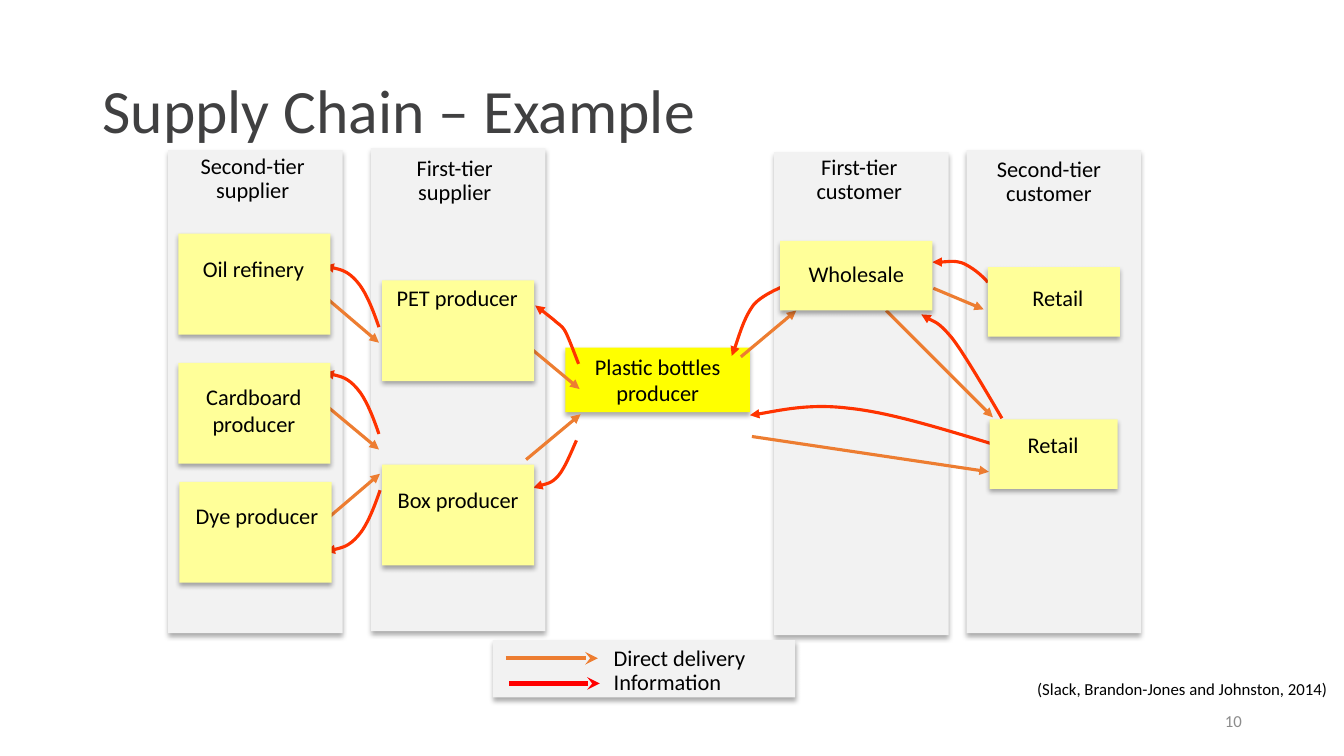
import pptx
import pptx.dml.color
import pptx.enum.shapes
import pptx.enum.text
import pptx.oxml
import pptx.oxml.ns
import pptx.util
from lxml import etree

# ---- Content (lengths in points) ----
TITLE = "Supply Chain – Example"
CITATION = "(Slack, Brandon-Jones and Johnston, 2014)"
PAGE_NUMBER = "10"

# text, left, top, text top inset, sideways text shift
PANELS = [
    ("Second-tier supplier", 120.2, 107.3, 3.6, -2),
    ("First-tier supplier", 265, 105.8, 6.5, -2.5),
    ("First-tier customer", 553, 108.7, 2.9, -1.5),
    ("Second-tier customer", 690.5, 107.3, 5.8, -3.5),
]
PANEL_SIZE = (124.6, 345)
PRODUCER = ("Plastic bottles producer", 403.9, 248.4, 131.8, 46.1, 3.6, 0)

# text, left, top, width, height, text top inset, sideways text shift
COMPANIES = [
    ("Oil refinery", 127.4, 167, 108.7, 72, 15.1, -0.7),
    ("Cardboard producer", 127.4, 259.2, 108.7, 72, 14.4, -0.4),
    ("Dye producer", 128.2, 344.2, 108.7, 72, 14.4, 1),
    ("PET producer", 272.9, 200.2, 108.7, 72, 2.9, -0.7),
    ("Box producer", 272.9, 331.9, 108.7, 72, 15.1, 0),
    ("Wholesale", 557.3, 172.1, 108.7, 49.7, 13.7, 0),
    ("Retail", 705.6, 190.8, 94.3, 49.7, 12.2, 2.9),
    ("Retail", 707, 299.5, 91.4, 49.7, 8.6, -0.4),
]

# Straight arrows, start to tip
DELIVERIES = [
    (231.8, 211.7, 270.7, 244.8), (231.8, 288.7, 270.7, 321.1),
    (232.6, 371.5, 271.4, 338.4), (375.1, 245.5, 414, 277.9),
    (375.8, 328.3, 414.7, 295.9), (529.2, 254.9, 568.8, 221.8),
    (537.1, 311.8, 706.3, 337), (632.9, 221.8, 709.2, 298.1),
    (666.7, 205.9, 702.7, 221),
]

# One curve shared by the second-tier suppliers: offsets from the tip
SUPPLIER_CURVE = [(38.9, 43.6), (34.6, 31), (29.5, 18), (23, 10.8),
                  (16.6, 3.6), (8.6, 1.4), (0, 0)]
SUPPLIER_TIPS = [(231.8, 190.1, 1), (231.8, 266.4, 1), (232.6, 393.8, -1)]

# Other curves: start, then two control points and an end per segment
INFORMATION = [
    [(413.3, 259.9), (411.8, 256.3), (406.8, 242.6), (403.9, 236.9),
     (401, 231.8), (398.9, 231.8), (395.3, 228.2),
     (391.7, 225.4), (384.5, 219.6), (382.3, 218.2)],
    [(411.8, 314.6), (409.7, 319), (403.9, 334.1), (398.9, 339.8),
     (393.8, 345.6), (384.5, 347), (380.9, 348.5)],
    [(568.8, 200.2), (562.3, 203.8), (546.5, 208.8), (538.6, 217.4),
     (531.4, 226.8), (525.6, 247.7), (522.7, 254.2)],
    [(707.8, 316.8), (671.8, 306), (635, 294.5), (606.2, 291.6),
     (577.4, 288), (547.9, 295.2), (535.7, 296.6)],
    [(715.7, 298.8), (708.5, 286.6), (689.8, 254.2), (680.4, 241.9),
     (670.3, 229.7), (661.7, 227.5), (658.1, 224.6)],
    [(705.6, 201.6), (700.6, 195.8), (694.1, 190.8), (687.6, 187.9),
     (681.1, 185.8), (669.6, 187.9), (666, 187.2)],
]

LEGEND_BOX = (352.1, 457.2, 216, 41)
# text, text top, colour, arrow left, arrow right, arrow height on the slide
LEGEND = [
    ("Direct delivery", 456.5, "delivery", 361.4, 427, 470.2),
    ("Information", 473.8, "legend_information", 363.6, 428.4, 488.2),
]

THEME = {
    "font": "Calibri",
    "color": {
        "title": "404041", "text": "000000", "page": "8C8C8C",
        "panel": "F2F2F2", "company": "FFFF99", "producer": "FFFF00",
        "delivery": "ED7D31", "information": "FF3300",
        "legend_information": "FF0000",
    },
    "size": {"title": 44, "body": 16, "small": 12},
    "line": {"flow": 2.25, "legend": 3},
}

Pt = pptx.util.Pt
ALIGN = pptx.enum.text.PP_ALIGN
ANCHOR = pptx.enum.text.MSO_ANCHOR


# ---- Helpers ----
def set_attributes(target, values):
    for name, value in values.items():
        setattr(target, name, value)


def color(name):
    return pptx.dml.color.RGBColor.from_string(THEME["color"][name])


def write(shape, text, size="body", ink="text", align=ALIGN.CENTER,
          spacing=None, **frame_values):
    frame = shape.text_frame
    set_attributes(frame, {"word_wrap": True, "vertical_anchor": ANCHOR.TOP,
                           **frame_values})
    paragraph = frame.paragraphs[0]
    paragraph.text = text
    set_attributes(paragraph, {"alignment": align, "line_spacing": spacing})
    font = paragraph.runs[0].font
    set_attributes(font, {"name": THEME["font"],
                          "size": Pt(THEME["size"][size])})
    font.color.rgb = color(ink)


def add_text(slide, text, bounds, **format_values):
    write(slide.shapes.add_textbox(*map(Pt, bounds)), text, **format_values)


def add_box(slide, bounds, fill):
    shape = slide.shapes.add_shape(
        pptx.enum.shapes.MSO_SHAPE.RECTANGLE, *map(Pt, bounds))
    shape.fill.solid()
    shape.fill.fore_color.rgb = color(fill)
    shape.line.fill.background()
    shape.shadow.inherit = False
    effects = shape._element.spPr.find(pptx.oxml.ns.qn("a:effectLst"))
    effects.append(pptx.oxml.parse_xml(
        f'<a:outerShdw {pptx.oxml.ns.nsdecls("a")} blurRad="{Pt(3.5)}" '
        f'dist="{Pt(2.2)}" dir="5400000" rotWithShape="0">'
        '<a:srgbClr val="000000"><a:alpha val="32000"/></a:srgbClr>'
        '</a:outerShdw>'))
    return shape


def add_labelled_box(slide, text, bounds, fill, top, shift, padding, spacing=None):
    write(add_box(slide, bounds, fill), text, spacing=spacing,
          margin_top=Pt(top), margin_bottom=0,
          margin_left=Pt(padding + shift), margin_right=Pt(padding - shift))


def style_arrow(shape, ink, weight, head):
    shape.line.color.rgb = color(ink)
    shape.line.width = Pt(THEME["line"][weight])
    line = shape._element.spPr.find(pptx.oxml.ns.qn("a:ln"))
    etree.SubElement(line, pptx.oxml.ns.qn("a:tailEnd"), type=head)


def add_straight_arrow(slide, ends, ink, weight="flow", head="triangle"):
    connector = slide.shapes.add_connector(
        pptx.enum.shapes.MSO_CONNECTOR.STRAIGHT, *map(Pt, ends))
    style_arrow(connector, ink, weight, head)
    etree.SubElement(connector._element.spPr, pptx.oxml.ns.qn("a:effectLst"))


def add_curved_arrow(slide, points):
    start, *rest = [(Pt(x), Pt(y)) for x, y in points]
    builder = slide.shapes.build_freeform(*start)
    builder.add_line_segments(rest, close=False)
    shape = builder.convert_to_shape()
    shape.fill.background()
    shape.shadow.inherit = False
    style_arrow(shape, "information", "flow", "triangle")
    # Each three straight segments become one cubic curve
    segments = list(shape._element.iter(pptx.oxml.ns.qn("a:lnTo")))
    for first in range(0, len(segments), 3):
        curve = etree.Element(pptx.oxml.ns.qn("a:cubicBezTo"))
        segments[first].addprevious(curve)
        for segment in segments[first:first + 3]:
            curve.append(segment[0])
            segment.getparent().remove(segment)


def main():
    presentation = pptx.Presentation()
    set_attributes(presentation, {"slide_width": Pt(960), "slide_height": Pt(540)})
    slide = presentation.slides.add_slide(presentation.slide_layouts[6])

    # Title and page number
    add_text(slide, TITLE, (66.2, 28.8, 828, 104.4), size="title", ink="title",
             align=ALIGN.LEFT, spacing=0.9, vertical_anchor=ANCHOR.MIDDLE)
    add_text(slide, PAGE_NUMBER, (678.2, 500.4, 216, 28.8), size="small",
             ink="page", align=ALIGN.RIGHT, vertical_anchor=ANCHOR.MIDDLE)

    # Tier panels and the central producer
    for text, left, top, inset, shift in PANELS:
        add_labelled_box(slide, text, (left, top, *PANEL_SIZE), "panel",
                         inset, shift, padding=10, spacing=0.9)
    text, *bounds, inset, shift = PRODUCER
    add_labelled_box(slide, text, bounds, "producer", inset, shift, padding=7.2)

    # Flows, then the companies over their ends
    for ends in DELIVERIES:
        add_straight_arrow(slide, ends, "delivery")
    supplier_curves = [[(x + dx, y + flip * dy) for dx, dy in SUPPLIER_CURVE]
                       for x, y, flip in SUPPLIER_TIPS]
    for points in supplier_curves + INFORMATION:
        add_curved_arrow(slide, points)
    for text, *bounds, inset, shift in COMPANIES:
        add_labelled_box(slide, text, bounds, "company", inset, shift, padding=4)

    # Legend and citation
    add_box(slide, LEGEND_BOX, "panel")
    for text, top, ink, left, right, level in LEGEND:
        add_text(slide, text, (431.3, top, 172.8, 26.6), align=ALIGN.LEFT)
        add_straight_arrow(slide, (left, level, right, level), ink,
                           weight="legend", head="stealth")
    add_text(slide, CITATION, (475.2, 481, 480.2, 21.6), size="small",
             align=ALIGN.RIGHT)

    presentation.save("out.pptx")


if __name__ == "__main__":
    main()
